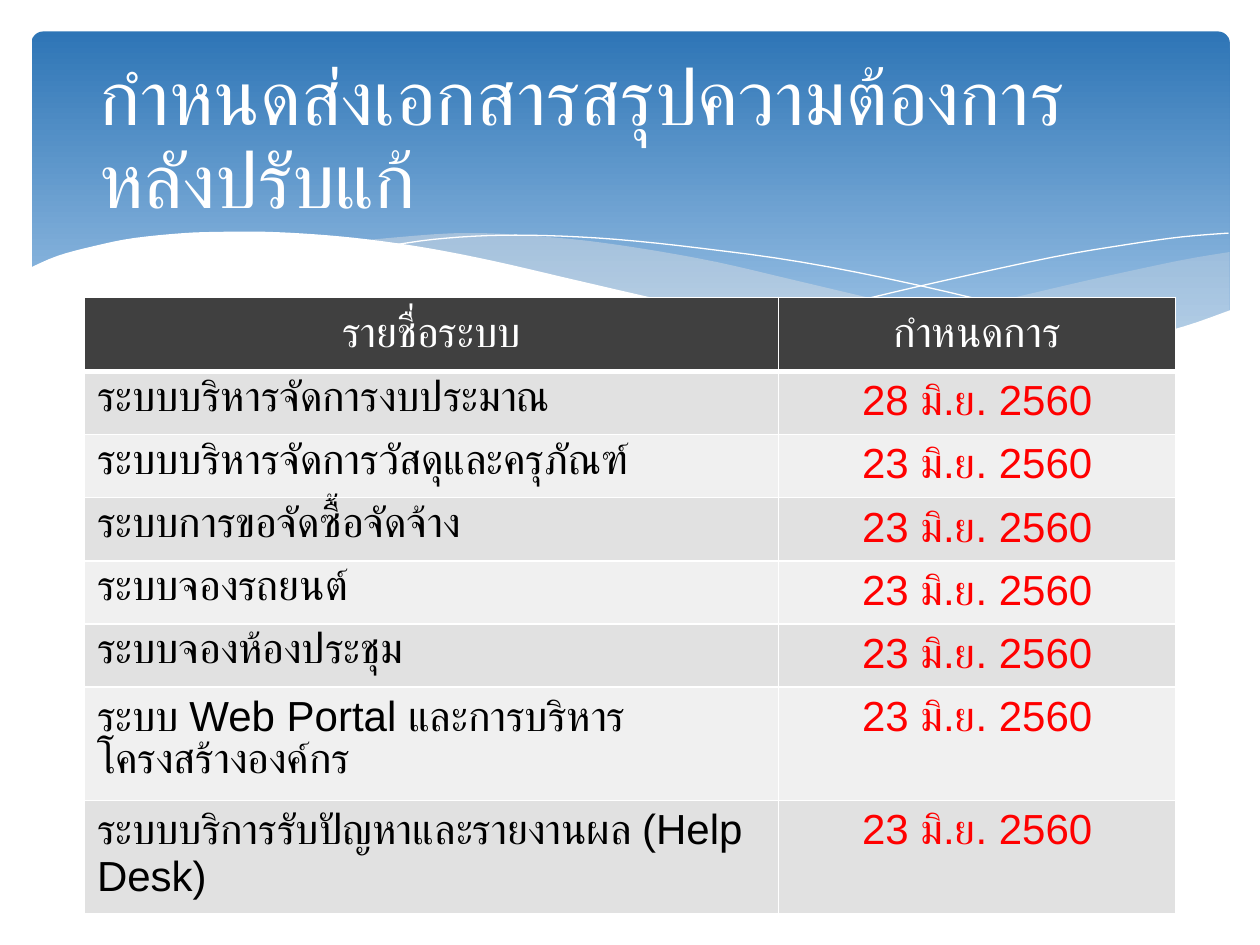
from dataclasses import dataclass
from typing import Optional

from lxml.etree import SubElement
from pptx import Presentation
from pptx.dml.color import RGBColor
from pptx.enum.shapes import MSO_SHAPE
from pptx.enum.text import MSO_ANCHOR, PP_ALIGN
from pptx.oxml import parse_xml
from pptx.oxml.ns import nsdecls, qn
from pptx.util import Inches, Pt

Point = tuple[float, float]


@dataclass(frozen=True)
class Theme:
    font: str = "Arial"
    title_size: int = 44
    table_size: int = 24
    white: str = "FFFFFF"
    black: str = "000000"
    red: str = "FF0000"
    header: str = "404040"
    bands: tuple[str, str] = ("E1E1E1", "F0F0F0")
    banner: tuple[str, str] = ("2E75B6", "9DC3E6")
    mist: str = "E7E6E6"


@dataclass(frozen=True)
class Wave:
    edges: list[list[Point]]  # smooth edges, joined by straight lines
    fill: Optional[str] = None  # an unfilled wave is a white hairline
    opacity: int = 100


@dataclass(frozen=True)
class Deadline:
    system: str
    date: str = "23 มิ.ย. 2560"


THEME = Theme()

WAVES = [
    # Right and middle translucent waves
    Wave([[(9.76, 2), (9.35, 2.07), (8.61, 2.23), (7.79, 2.42), (7.06, 2.57), (6.61, 2.65)],
          [(6.61, 2.65), (7.19, 2.72), (7.69, 2.77), (8.14, 2.78), (8.54, 2.76),
           (8.97, 2.7), (9.35, 2.62), (9.76, 2.47)]], THEME.mist, 29),
    Wave([[(8.93, 2.73), (8.37, 2.65), (7.75, 2.54), (7.06, 2.4), (6.29, 2.22), (5.69, 2.08),
           (5.14, 1.98), (4.65, 1.91), (4.2, 1.87), (3.8, 1.85), (3.44, 1.86), (2.86, 1.91)],
          [(2.86, 1.91), (3.42, 1.99), (4.04, 2.11), (4.49, 2.22), (5.3, 2.4), (6.01, 2.55),
           (6.65, 2.66), (7.22, 2.74), (7.73, 2.77), (8.18, 2.78), (8.57, 2.77), (8.93, 2.73)]],
         THEME.mist, 40),
    # Hairlines
    Wave([[(3.09, 1.95), (3.44, 1.9), (3.87, 1.87), (4.33, 1.87), (4.89, 1.9), (5.56, 1.97),
           (6.36, 2.08), (7.27, 2.26), (8.31, 2.51), (9.07, 2.72)]]),
    Wave([[(6.13, 2.57), (6.72, 2.41), (7.48, 2.23), (8.36, 2.04), (8.95, 1.94),
           (9.38, 1.88), (9.75, 1.85)]]),
    # White foreground wave
    Wave([[(9.77, 2.46), (9.4, 2.59), (8.99, 2.69), (8.5, 2.75), (8.09, 2.77), (7.61, 2.75),
           (7.08, 2.7), (6.48, 2.62), (5.79, 2.5), (5.03, 2.33), (4.47, 2.2), (3.91, 2.07),
           (3.4, 1.97), (2.92, 1.9), (2.5, 1.86), (2.11, 1.84), (1.77, 1.84), (1.46, 1.85),
           (1.06, 1.89), (0.76, 1.95), (0.46, 2.03), (0.23, 2.13)],
          [(0.23, 3.29), (9.77, 3.29)]], THEME.white),
]

HEADINGS = ("รายชื่อระบบ", "กำหนดการ")
DEADLINES = [
    Deadline("ระบบบริหารจัดการงบประมาณ", "28 มิ.ย. 2560"),
    Deadline("ระบบบริหารจัดการวัสดุและครุภัณฑ์"),
    Deadline("ระบบการขอจัดซื้อจัดจ้าง"),
    Deadline("ระบบจองรถยนต์"),
    Deadline("ระบบจองห้องประชุม"),
    Deadline("ระบบ Web Portal และการบริหารโครงสร้างองค์กร"),
    Deadline("ระบบบริการรับปัญหาและรายงานผล (Help Desk)"),
]


def color(value: str) -> RGBColor:
    return RGBColor.from_string(value)


def smooth(knots: list[Point], steps: int = 4) -> list[Point]:
    """Catmull-Rom curve through the knots."""
    if len(knots) < 3:
        return knots
    padded = [knots[0], *knots, knots[-1]]
    points = [knots[0]]
    for a, b, c, d in zip(padded, padded[1:], padded[2:], padded[3:]):
        for step in range(1, steps + 1):
            t = step / steps
            x, y = (
                (2 * q + (r - p) * t + (2 * p - 5 * q + 4 * r - s) * t**2
                 + (3 * q - p - 3 * r + s) * t**3) / 2
                for p, q, r, s in zip(a, b, c, d)
            )
            points.append((x, y))
    return points


def style_text(frame, size: int, hue: str, align=PP_ALIGN.LEFT) -> None:
    for para in frame.paragraphs:
        para.alignment = align
        for span in para.runs:
            span.font.name = THEME.font
            span.font.size = Pt(size)
            span.font.color.rgb = color(hue)


def draw_banner(page) -> None:
    banner = page.shapes.add_shape(MSO_SHAPE.ROUNDED_RECTANGLE, Inches(0.25), Inches(0.25),
                                   Inches(9.51), Inches(2.7))
    banner.adjustments[0] = 0.034
    banner.shadow.inherit = False
    banner.line.fill.background()
    banner.fill.gradient()
    banner.fill.gradient_angle = 270
    for stop, hue, position in zip(banner.fill.gradient_stops, THEME.banner, (0, 0.9)):
        stop.color.rgb = color(hue)
        stop.position = position


def draw_wave(page, wave: Wave) -> None:
    points = [(Inches(x), Inches(y)) for edge in wave.edges for x, y in smooth(edge)]
    builder = page.shapes.build_freeform(*points[0])
    builder.add_line_segments(points[1:], close=wave.fill is not None)
    shape = builder.convert_to_shape()
    shape.shadow.inherit = False
    if wave.fill is None:
        shape.fill.background()
        shape.line.color.rgb = color(THEME.white)
        shape.line.width = Pt(0)
        return
    shape.line.fill.background()
    shape.fill.solid()
    shape.fill.fore_color.rgb = color(wave.fill)
    if wave.opacity < 100:
        solid = shape.fill.fore_color._xFill[0]
        SubElement(solid, qn("a:alpha"), val=str(wave.opacity * 1000))


def draw_title(page, text: str) -> None:
    box = page.shapes.add_textbox(Inches(0.69), Inches(0.4), Inches(8.62), Inches(1.45))
    frame = box.text_frame
    frame.word_wrap = True
    frame.vertical_anchor = MSO_ANCHOR.MIDDLE
    frame.text = text
    frame.paragraphs[0].line_spacing = 0.9
    style_text(frame, THEME.title_size, THEME.white)


def add_borders(cell, bottom: int) -> None:
    properties = cell._tc.get_or_add_tcPr()
    widths = {"lnL": 1, "lnR": 1, "lnT": 1, "lnB": bottom}
    for index, (side, width) in enumerate(widths.items()):
        properties.insert(index, parse_xml(
            f'<a:{side} {nsdecls("a")} w="{Pt(width)}"><a:solidFill>'
            f'<a:srgbClr val="{THEME.white}"/></a:solidFill></a:{side}>'))


def fill_cell(cell, text: str, fill: str, hue: str, align, bottom: int = 1) -> None:
    cell.text = text
    cell.fill.solid()
    cell.fill.fore_color.rgb = color(fill)
    style_text(cell.text_frame, THEME.table_size, hue, align)
    add_borders(cell, bottom)


def draw_table(page) -> None:
    table = page.shapes.add_table(len(DEADLINES) + 1, 2, Inches(0.67), Inches(2.36),
                                  Inches(8.66), Inches(3.46)).table
    for column, width in zip(table.columns, (5.51, 3.15)):
        column.width = Inches(width)
    for index, row in enumerate(table.rows):
        row.height = Inches(0.41 if index else 0.59)
    for cell, heading in zip(table.rows[0].cells, HEADINGS):
        fill_cell(cell, heading, THEME.header, THEME.white, PP_ALIGN.CENTER, bottom=3)
        cell.vertical_anchor = MSO_ANCHOR.MIDDLE
        cell.text_frame.paragraphs[0].runs[0].font.bold = False
    for index, deadline in enumerate(DEADLINES):
        band = THEME.bands[index % 2]
        system, date = table.rows[index + 1].cells
        fill_cell(system, deadline.system, band, THEME.black, PP_ALIGN.LEFT)
        fill_cell(date, deadline.date, band, THEME.red, PP_ALIGN.CENTER)


def main() -> None:
    deck = Presentation()
    deck.slide_width, deck.slide_height = Inches(10), Inches(7.5)
    page = deck.slides.add_slide(deck.slide_layouts[6])
    draw_banner(page)
    for wave in WAVES:
        draw_wave(page, wave)
    draw_title(page, "กำหนดส่งเอกสารสรุปความต้องการหลังปรับแก้")
    draw_table(page)
    deck.save("out.pptx")


if __name__ == "__main__":
    main()
